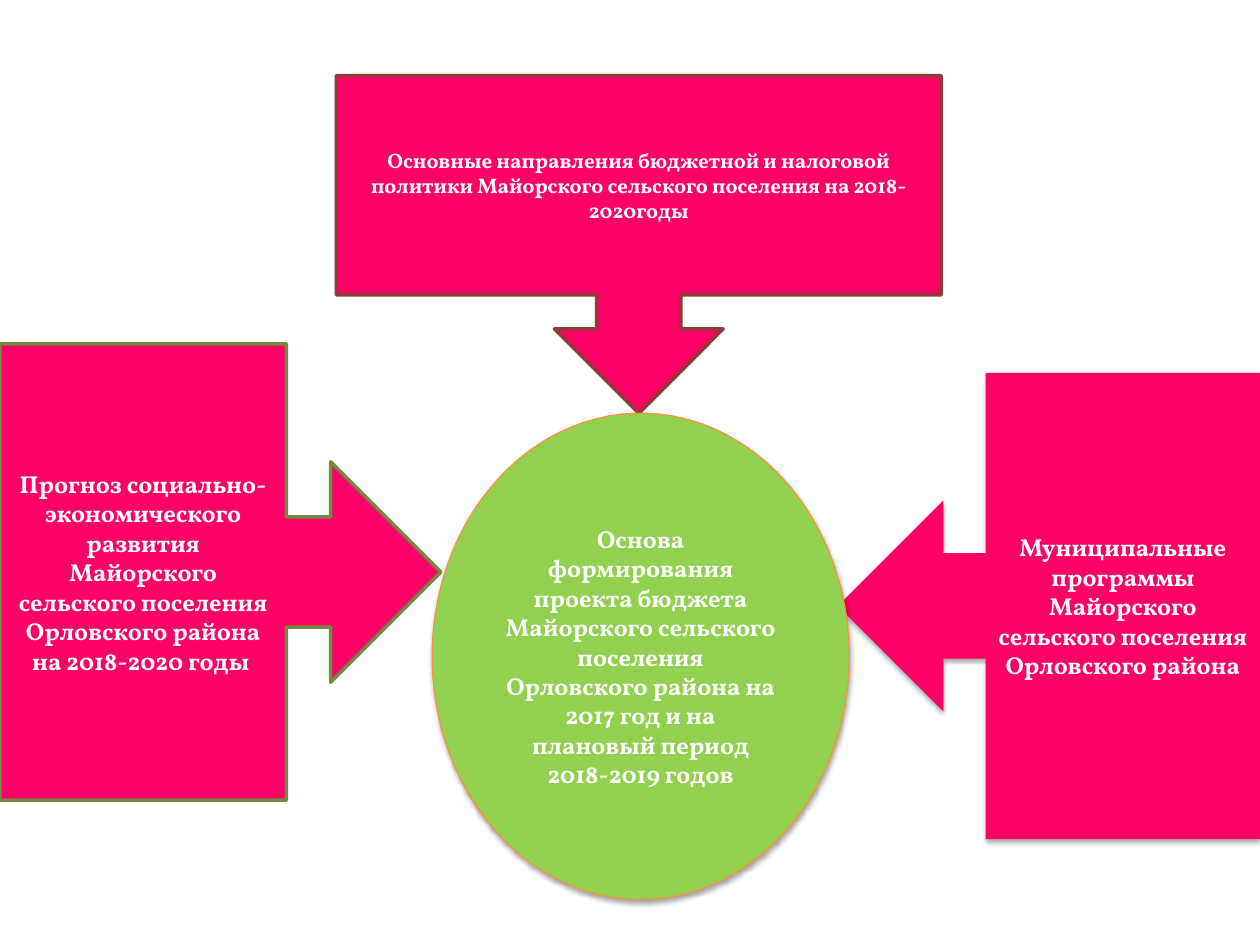
from lxml import etree
from pptx import Presentation
from pptx import util as u
from pptx.dml.color import RGBColor
from pptx.enum import shapes, text
from pptx.oxml.ns import qn

Kind = shapes.MSO_SHAPE
PINK, GREEN, WHITE = "FF0066", "92D050", "FFFFFF"
FONT = {"name": "Vollkorn", "bold": True}

# kind, box (left, top, width, height), fill, line (colour, width), shadow, text size, words
PARTS = [
    (Kind.DOWN_ARROW_CALLOUT, (192.24, 43.2, 345.6, 192.96), PINK, ("8E3B39", 2), False, 12,
     "Основные направления бюджетной и налоговой политики "
     "Майорского сельского поселения на 2018-2020годы"),
    (Kind.RIGHT_ARROW_CALLOUT, (0, 196.56, 252, 260.64), PINK, ("738A42", 2), False, 14,
     "Прогноз социально-экономического развития Майорского "
     "сельского поселения Орловского района на 2018-2020 годы "),
    (Kind.LEFT_ARROW_CALLOUT, (478.8, 213.12, 241.2, 266.4), PINK, None, True, 14,
     "Муниципальные программы Майорского сельского поселения Орловского района"),
    (Kind.OVAL, (246.96, 236.16, 238.32, 277.92), GREEN, ("F69240", 0.75), True, 14,
     "Основа формирования проекта бюджета Майорского сельского поселения "
     "Орловского района на 2017 год и на плановый период 2018-2019 годов"),
]


def paint(form, tint):
    form.solid()
    form.fore_color.rgb = RGBColor.from_string(tint)


def shade(shape):
    """Add a soft black shadow just below the shape."""
    effects = shape._element.spPr.find(qn("a:effectLst"))
    drop = etree.SubElement(effects, qn("a:outerShdw"), blurRad=str(u.Pt(3.1)),
                            dist=str(u.Pt(1.8)), dir="5400000", rotWithShape="0")
    tint = etree.SubElement(drop, qn("a:srgbClr"), val="000000")
    etree.SubElement(tint, qn("a:alpha"), val="35000")


def write(shape, words, size):
    frame = shape.text_frame
    frame.word_wrap = True
    frame.vertical_anchor = text.MSO_ANCHOR.MIDDLE
    para = frame.paragraphs[0]
    para.alignment = text.PP_ALIGN.CENTER
    run = para.add_run()
    run.text = words
    for key, value in {**FONT, "size": u.Pt(size)}.items():
        setattr(run.font, key, value)
    paint(run.font.fill, WHITE)


def main():
    deck = Presentation()
    deck.slide_width, deck.slide_height = u.Pt(720), u.Pt(540)
    slide = deck.slides.add_slide(deck.slide_layouts[6])
    for kind, box, fill, line, shadow, size, words in PARTS:
        shape = slide.shapes.add_shape(kind, *map(u.Pt, box))
        paint(shape.fill, fill)
        if line:
            paint(shape.line.fill, line[0])
            shape.line.width = u.Pt(line[1])
        else:
            shape.line.fill.background()
        shape.shadow.inherit = False
        if shadow:
            shade(shape)
        write(shape, words, size)
    deck.save("out.pptx")


if __name__ == "__main__":
    main()
